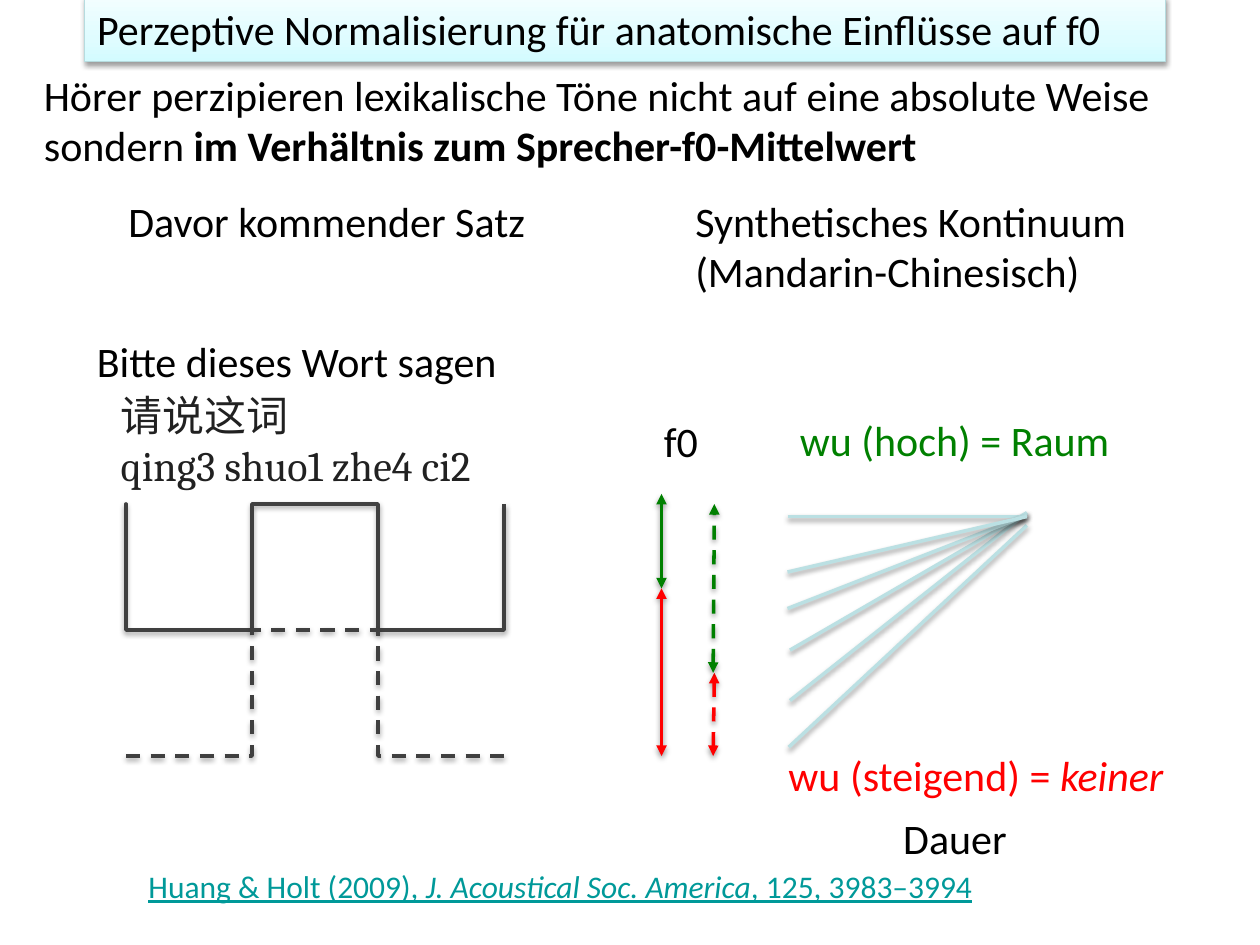
from copy import deepcopy

from lxml.etree import SubElement
from pptx import Presentation
from pptx.dml.color import RGBColor
from pptx.enum.dml import MSO_LINE_DASH_STYLE as Dash
from pptx.enum.shapes import MSO_CONNECTOR as Connector
from pptx.enum.text import MSO_ANCHOR as Anchor, MSO_AUTO_SIZE as AutoSize, PP_ALIGN as Align
from pptx.oxml.ns import qn
from pptx.util import Inches, Pt

BLACK, GREEN, RED = "000000", "008000", "FF0000"
FAN_BLUE, CONTOUR_GRAY, LINK_TEAL, INK = "BBE0E3", "404040", "009999", "212121"

# Pitch contour of the carrier sentence, in inches from its upper left corner
CONTOUR = [
    (0, 0.39), (0.04, 0.35), (0.08, 0.31), (0.14, 0.27), (0.2, 0.26), (0.27, 0.24),
    (0.3, 0.22), (0.36, 0.21), (0.48, 0.22), (0.53, 0.25), (0.57, 0.27), (0.64, 0.3),
    (0.71, 0.34), (0.77, 0.39), (0.82, 0.43), (0.86, 0.47), (0.93, 0.47), (1.01, 0.47),
    (1.08, 0.49), (1.14, 0.47), (1.21, 0.44), (1.28, 0.39), (1.34, 0.34), (1.39, 0.31),
    (1.45, 0.25), (1.49, 0.24), (1.53, 0.21), (1.61, 0.15), (1.69, 0.12), (1.8, 0.06),
    (1.92, 0.02), (2.01, 0), (2.1, 0), (2.15, 0.01), (2.22, 0.03), (2.29, 0.08),
    (2.38, 0.13), (2.49, 0.17), (2.53, 0.19), (2.6, 0.25), (2.66, 0.31), (2.7, 0.36),
    (2.76, 0.39), (2.82, 0.4), (2.91, 0.41), (3.01, 0.4), (3.13, 0.35), (3.18, 0.33),
    (3.26, 0.29), (3.36, 0.27), (3.45, 0.26), (3.58, 0.27), (3.64, 0.3), (3.66, 0.31),
]
F0_ARROWS = [
    ((5.66, 6), (5.67, 5.34), RED, Dash.DASH),
    ((5.66, 5.34), (5.67, 4), GREEN, Dash.DASH),
    ((5.25, 4.67), (5.25, 3.92), GREEN, None),
    ((5.25, 6), (5.25, 4.67), RED, None),
]
CONTINUUM = [
    ((6.25, 4.1), (8.14, 4.1)),
    ((6.26, 5.93), (8.15, 4.17)),
    ((6.27, 5.56), (8.15, 4.07)),
    ((6.27, 5.16), (8.15, 4.07)),
    ((6.25, 4.83), (8.15, 4.09)),
    ((6.25, 4.54), (8.15, 4.1)),
]


def rgb(hex_color):
    return RGBColor.from_string(hex_color)


def add_soft_shadow(shape):
    """Cast a soft shadow downward; call after fill and line are set."""
    properties = shape._element.spPr
    for effects in properties.findall(qn("a:effectLst")):
        properties.remove(effects)
    effects = SubElement(properties, qn("a:effectLst"))
    shadow = SubElement(effects, qn("a:outerShdw"), blurRad=str(Pt(3.1)),
                        dist=str(Pt(1.6)), dir="5400000", rotWithShape="0")
    color = SubElement(shadow, qn("a:srgbClr"), val=BLACK)
    SubElement(color, qn("a:alpha"), val="38000")


def style_line(shape, color, dash=None, width=2):
    shape.line.color.rgb = rgb(color)
    shape.line.width = Pt(width)
    if dash:
        shape.line.dash_style = dash


def write_text(frame, *paragraphs, size=24, font="Calibri", color=BLACK, underline=None):
    """Fill the frame; each paragraph is a list of (text, style) with style "", "b" or "i"."""
    for index, spans in enumerate(paragraphs):
        para = frame.add_paragraph() if index else frame.paragraphs[0]
        para.alignment = Align.LEFT
        for text, style in spans:
            span = para.add_run()
            span.text = text
            span.font.name, span.font.size = font, Pt(size)
            span.font.color.rgb = rgb(color)
            span.font.underline = underline
            span.font.bold = style == "b"
            span.font.italic = style == "i"


def add_text(slide, left, top, width, height, *paragraphs, wrap=True, **style):
    box = slide.shapes.add_textbox(Inches(left), Inches(top), Inches(width), Inches(height))
    box.text_frame.word_wrap = wrap
    box.text_frame.auto_size = AutoSize.SHAPE_TO_FIT_TEXT
    write_text(box.text_frame, *paragraphs, **style)


def add_title(slide, text):
    title = slide.shapes.title
    title.left, title.top = Inches(0.67), Inches(-0.02)
    title.width, title.height = Inches(8.58), Inches(0.51)
    title.fill.gradient()
    title.fill.gradient_angle = 90
    stop_list = title._element.spPr.find(".//" + qn("a:gsLst"))
    stop_list.append(deepcopy(stop_list[-1]))
    stops = [(0, "D3FBFF"), (0.35, "DFFCFF"), (1, "F2FEFF")]
    for stop, (position, color) in zip(title.fill.gradient_stops, stops):
        stop.position, stop.color.rgb = position, rgb(color)
    style_line(title, "B6DCDF", width=0.75)
    add_soft_shadow(title)
    title.text_frame.auto_size = AutoSize.NONE
    title.text_frame.vertical_anchor = Anchor.TOP
    write_text(title.text_frame, [(text, "")])


def add_line(slide, start, end, color, dash=None, arrows=False):
    line = slide.shapes.add_connector(Connector.STRAIGHT, *map(Inches, start + end))
    style_line(line, color, dash)
    if arrows:
        outline = line._element.spPr.find(qn("a:ln"))
        for tag in ("a:headEnd", "a:tailEnd"):
            SubElement(outline, qn(tag), type="triangle")
    add_soft_shadow(line)


def add_contour(slide, left, top, dash=None):
    points = [(left + x, top + y) for x, y in CONTOUR]
    builder = slide.shapes.build_freeform(*points[0], scale=Inches(1))
    builder.add_line_segments(points[1:], close=False)
    contour = builder.convert_to_shape()
    contour.fill.background()
    style_line(contour, CONTOUR_GRAY, dash)
    add_soft_shadow(contour)


def main():
    deck = Presentation()
    deck.slide_width, deck.slide_height = Inches(10), Inches(7.5)
    slide = deck.slides.add_slide(deck.slide_layouts[5])

    add_title(slide, "Perzeptive Normalisierung für anatomische Einflüsse auf f0")
    add_text(slide, 0.25, 0.5, 9.17, 0.91, [
        ("Hörer perzipieren lexikalische Töne nicht auf eine absolute Weise sondern ", ""),
        ("im Verhältnis zum Sprecher-f0-Mittelwert", "b")])

    add_text(slide, 0.92, 1.5, 3.5, 0.5, [("Davor kommender Satz", "")])
    add_text(slide, 0.67, 2.61, 3.41, 0.5, [("Bitte dieses Wort sagen", "")], wrap=False)
    add_text(slide, 0.86, 3.04, 3.28, 0.91, [("请说这词", "")],
             [("qing3 shuo1 zhe4 ci2", "")], wrap=False, font="Cambria", color=INK)
    add_contour(slide, 0.67, 4.17)
    add_contour(slide, 0.67, 5.42, Dash.DASH)

    add_text(slide, 5.42, 1.5, 3.83, 0.91,
             [("Synthetisches Kontinuum (Mandarin-Chinesisch)", "")])
    add_text(slide, 5.17, 3.25, 0.58, 0.51, [("f0", "")])
    add_text(slide, 6.25, 3.24, 2.91, 0.51, [("wu (hoch) = Raum", "")], color=GREEN)
    for start, end, color, dash in F0_ARROWS:
        add_line(slide, start, end, color, dash, arrows=True)
    for start, end in CONTINUUM:
        add_line(slide, start, end, FAN_BLUE)
    add_text(slide, 6.16, 5.9, 3.26, 0.51,
             [("wu (steigend) = ", ""), ("keiner", "i")], color=RED)
    add_text(slide, 7.07, 6.4, 1.08, 0.51, [("Dauer", "")])

    add_text(slide, 1.08, 6.83, 8.08, 0.4, [
        ("Huang & Holt (2009), ", ""), ("J. Acoustical Soc. America", "i"),
        (", 125, 3983–3994", "")], size=18, color=LINK_TEAL, underline=True)
    deck.save("out.pptx")


if __name__ == "__main__":
    main()
